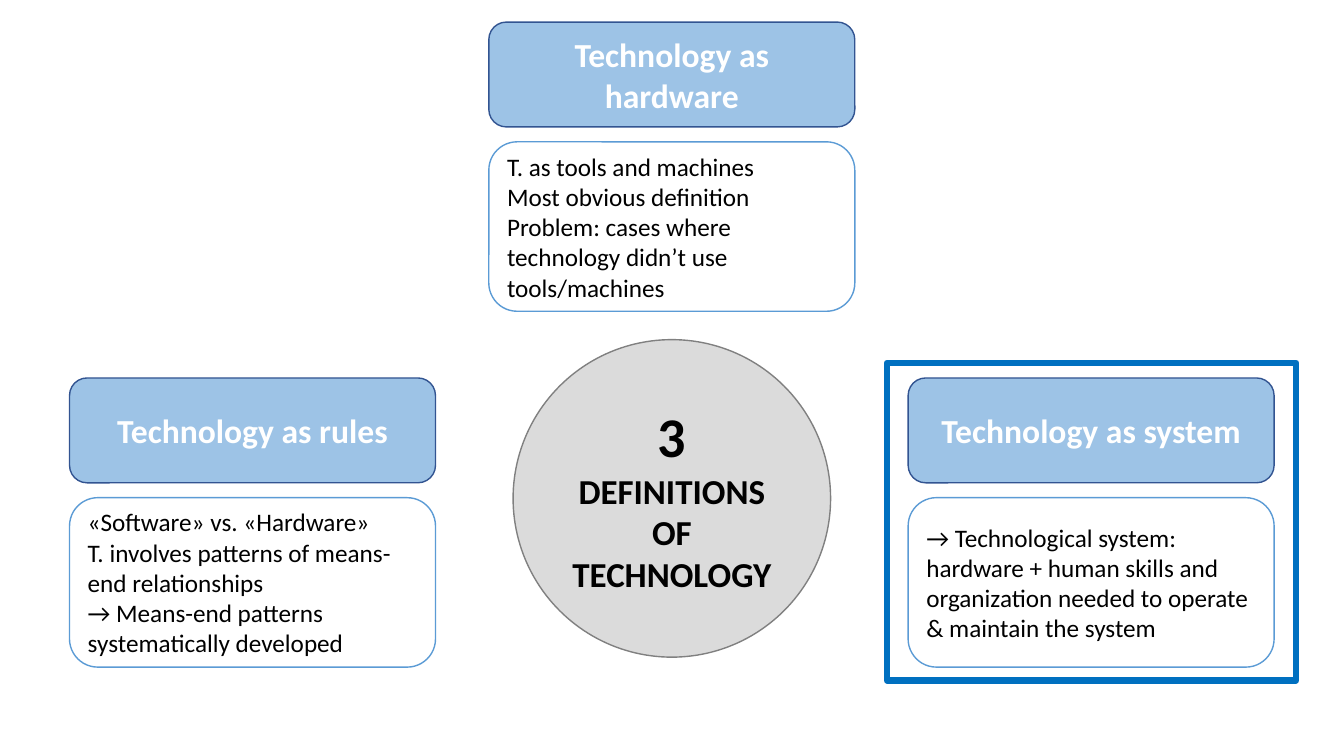
from pptx import Presentation
from pptx.dml.color import RGBColor
from pptx.enum import shapes, text
from pptx.util import Pt

CARDS = [
    (349.2, 15.8, "Technology as hardware", [
        "T. as tools and machines",
        "Most obvious definition",
        "Problem: cases where technology didn’t use tools/machines",
    ]),
    (49.7, 270, "Technology as rules", [
        "«Software» vs. «Hardware»",
        "T. involves patterns of means-end relationships",
        "→ Means-end patterns systematically developed",
    ]),
    (648.7, 270, "Technology as system", [
        "→ Technological system: hardware + human skills and "
        "organization needed to operate & maintain the system",
    ]),
]
CENTRE = [("3", 40), ("DEFINITIONS OF TECHNOLOGY", 25)]

CARD_WIDTH, TITLE_HEIGHT, BODY_HEIGHT = 261.4, 74.9, 121
BODY_OFFSET = 85.5
CIRCLE = (366.5, 242.6, 226.8, 226.8)
HIGHLIGHT = (633.6, 259.2, 292.3, 226.8)

WHITE = RGBColor(0xFF, 0xFF, 0xFF)
BLACK = RGBColor(0x00, 0x00, 0x00)
LIGHT_BLUE = RGBColor(0x9D, 0xC3, 0xE6)
DARK_BLUE = RGBColor(0x32, 0x54, 0x91)
MID_BLUE = RGBColor(0x5B, 0x9B, 0xD5)
FRAME_BLUE = RGBColor(0x00, 0x70, 0xC0)
PALE_GREY = RGBColor(0xDB, 0xDB, 0xDB)
GREY = RGBColor(0x80, 0x80, 0x80)

ROUNDED = shapes.MSO_SHAPE.ROUNDED_RECTANGLE
LEFT, CENTER = text.PP_ALIGN.LEFT, text.PP_ALIGN.CENTER


def add_box(parent, kind, place, fill, line, line_width=1):
    box = parent.add_shape(kind, *[Pt(length) for length in place])
    box.shadow.inherit = False
    if fill is None:
        box.fill.background()
    else:
        box.fill.solid()
        box.fill.fore_color.rgb = fill
    box.line.color.rgb = line
    box.line.width = Pt(line_width)
    return box


def write(box, lines, color, bold, align):
    frame = box.text_frame
    frame.word_wrap = True
    frame.vertical_anchor = text.MSO_ANCHOR.MIDDLE
    for index, (words, size) in enumerate(lines):
        para = frame.add_paragraph() if index else frame.paragraphs[0]
        para.alignment = align
        span = para.add_run()
        span.text = words
        span.font.name = "Calibri"
        span.font.size = Pt(size)
        span.font.bold = bold
        span.font.color.rgb = color


def add_card(page, left, top, title, body):
    card = page.shapes.add_group_shape().shapes
    header = add_box(card, ROUNDED, (left, top, CARD_WIDTH, TITLE_HEIGHT),
                     LIGHT_BLUE, DARK_BLUE)
    write(header, [(title, 24)], WHITE, True, CENTER)
    details = add_box(card, ROUNDED,
                      (left, top + BODY_OFFSET, CARD_WIDTH, BODY_HEIGHT),
                      WHITE, MID_BLUE)
    write(details, [(words, 18) for words in body], BLACK, False, LEFT)


def main():
    deck = Presentation()
    deck.slide_width, deck.slide_height = Pt(960), Pt(540)
    page = deck.slides.add_slide(deck.slide_layouts[6])
    for card in CARDS:
        add_card(page, *card)
    circle = add_box(page.shapes, shapes.MSO_SHAPE.OVAL, CIRCLE, PALE_GREY, GREY)
    write(circle, CENTRE, BLACK, True, CENTER)
    add_box(page.shapes, shapes.MSO_SHAPE.RECTANGLE, HIGHLIGHT, None, FRAME_BLUE, 4.5)
    deck.save("out.pptx")


if __name__ == "__main__":
    main()
